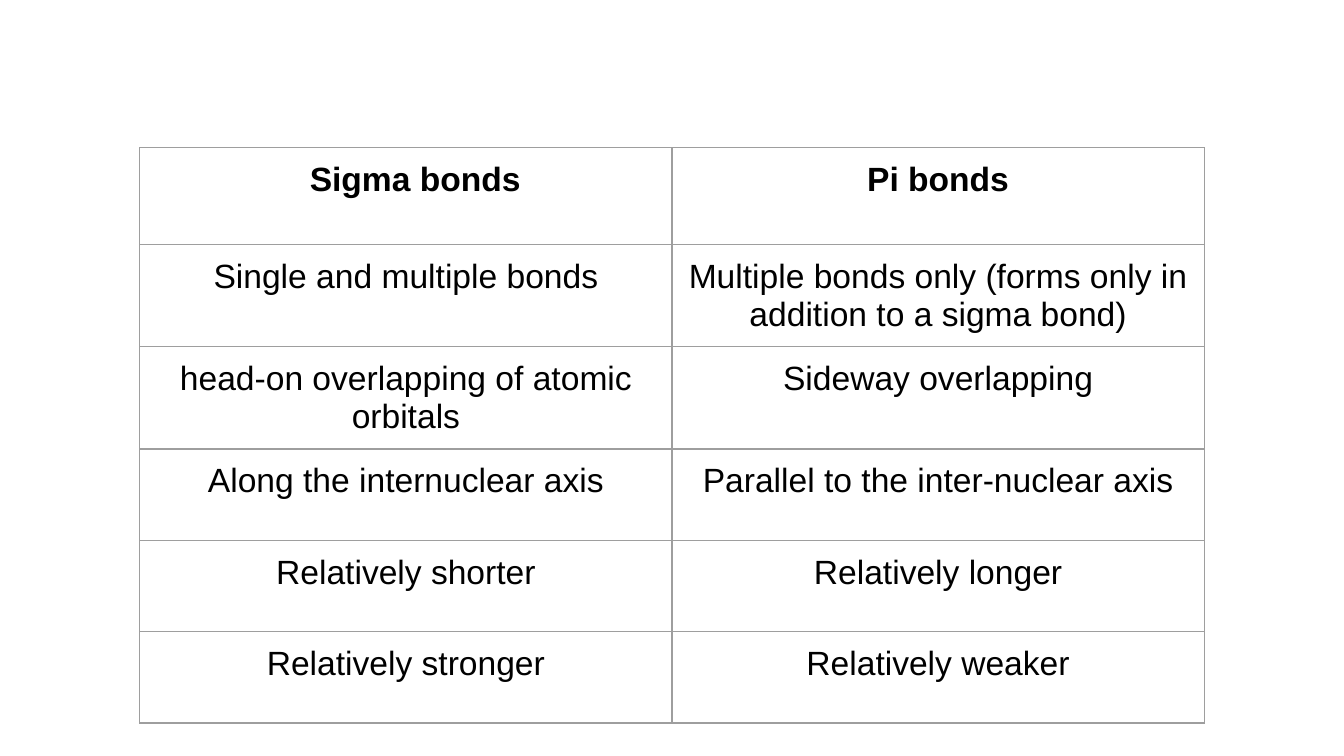
import pptx
import pptx.dml.color
import pptx.enum.text
import pptx.oxml
import pptx.oxml.ns
import pptx.util
from pptx.util import Inches


def color(hex_string):
    return pptx.dml.color.RGBColor.from_string(hex_string)


class SlideBuilder:
    font_name = "Arial"
    font_size = 18
    text_color = "000000"
    border_color = "9E9E9E"
    border_width = 0.75
    cell_margin = 0.1

    def __init__(self, slide):
        self.slide = slide

    def background(self, hex_string):
        fill = self.slide.background.fill
        fill.solid()
        fill.fore_color.rgb = color(hex_string)

    def table(self, left, top, column_widths, row_heights, rows):
        shape = self.slide.shapes.add_table(
            len(rows), len(column_widths), Inches(left), Inches(top),
            Inches(sum(column_widths)), Inches(sum(row_heights)))
        table = shape.table
        table.first_row = False
        table.horz_banding = False
        for column, width in zip(table.columns, column_widths):
            column.width = Inches(width)
        for row, height in zip(table.rows, row_heights):
            row.height = Inches(height)
        for row_index, texts in enumerate(rows):
            for column_index, text in enumerate(texts):
                self.cell(table.cell(row_index, column_index), text,
                          bold=row_index == 0)
        return table

    def cell(self, cell, text, bold):
        margin = Inches(self.cell_margin)
        cell.margin_left = cell.margin_right = margin
        cell.margin_top = cell.margin_bottom = margin
        self.borders(cell)
        cell.fill.background()
        paragraph = cell.text_frame.paragraphs[0]
        paragraph.alignment = pptx.enum.text.PP_ALIGN.CENTER
        run = paragraph.add_run()
        run.text = text
        run.font.name = self.font_name
        run.font.size = pptx.util.Pt(self.font_size)
        run.font.bold = bold
        run.font.color.rgb = color(self.text_color)

    def borders(self, cell):
        properties = cell._tc.get_or_add_tcPr()
        width = pptx.util.Pt(self.border_width)
        for side in ("lnL", "lnR", "lnT", "lnB"):
            properties.append(pptx.oxml.parse_xml(
                f'<a:{side} {pptx.oxml.ns.nsdecls("a")} w="{width}">'
                f'<a:solidFill><a:srgbClr val="{self.border_color}"/></a:solidFill>'
                f'</a:{side}>'))

    def indent(self, paragraph, left, first_line):
        properties = paragraph._p.get_or_add_pPr()
        properties.set("marL", str(Inches(left)))
        properties.set("indent", str(Inches(first_line)))


def main():
    # Widescreen slide, 16:9
    presentation = pptx.Presentation()
    presentation.slide_width = Inches(10)
    presentation.slide_height = Inches(10 * 9 / 16)
    slide = presentation.slides.add_slide(presentation.slide_layouts[6])
    builder = SlideBuilder(slide)
    builder.background("FFFFFF")

    # Comparison of the two bond types
    bonds = [
        ("Sigma bonds", "Pi bonds"),
        ("Single and multiple bonds",
         "Multiple bonds only (forms only in addition to a sigma bond)"),
        ("head-on overlapping of atomic orbitals", "Sideway overlapping"),
        ("Along the internuclear axis", "Parallel to the inter-nuclear axis"),
        ("Relatively shorter", "Relatively longer"),
        ("Relatively stronger", "Relatively weaker"),
    ]
    table = builder.table(1.04, 1.1, [3.96] * 2, [0.72, 0.7] + [0.68] * 4, bonds)

    # The first heading has a hanging indent
    builder.indent(table.cell(0, 0).text_frame.paragraphs[0], 0.38, -0.24)

    presentation.save("out.pptx")


if __name__ == "__main__":
    main()
